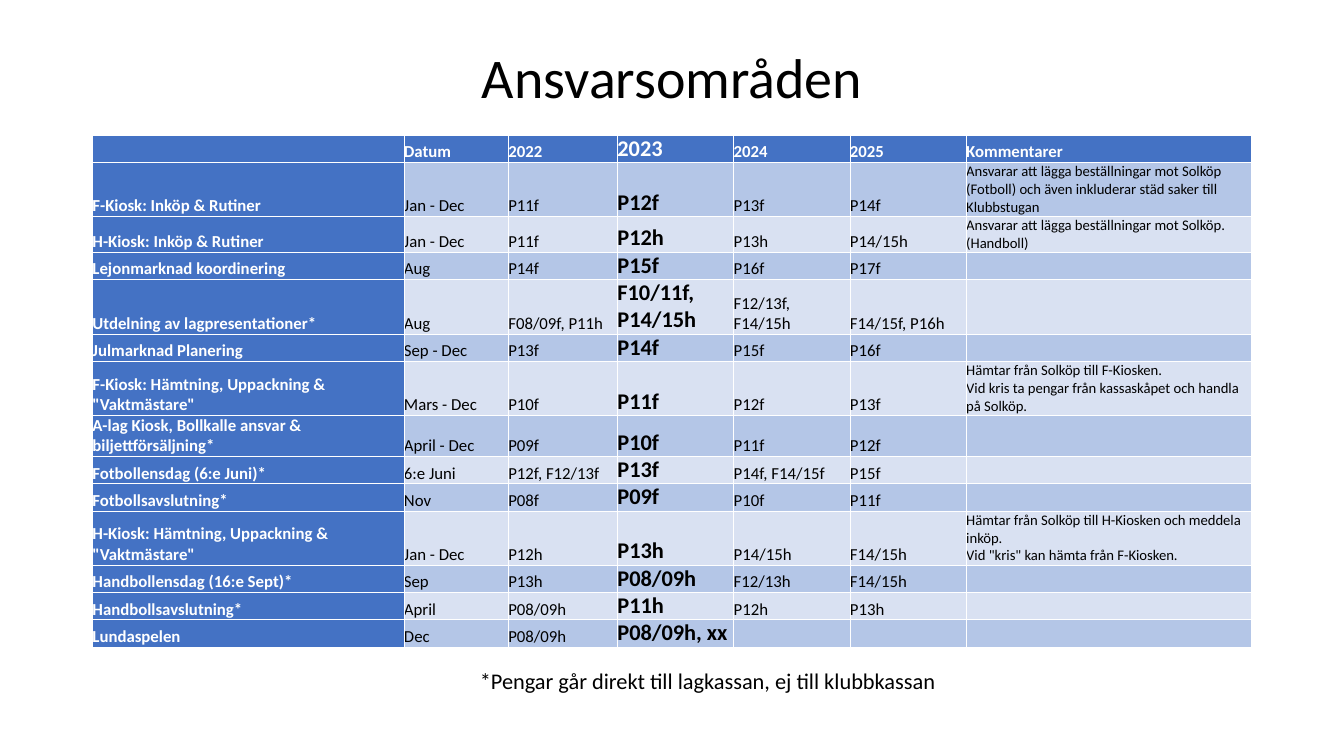
from dataclasses import dataclass

from lxml import etree
from pptx import Presentation
from pptx import util as u
from pptx.dml.color import RGBColor
from pptx.enum import text
from pptx.oxml import ns


@dataclass(frozen=True)
class Theme:
    font: str = "Calibri"
    ink: str = "000000"
    white: str = "FFFFFF"
    blue: str = "4472C4"
    bands: tuple[str, str] = ("B4C6E7", "D9E1F2")
    title_size: float = 40
    footnote_size: float = 16
    current_year_size: float = 16
    body_size: float = 12
    comment_size: float = 10.5
    grid_width: float = 0.5


@dataclass(frozen=True)
class Duty:
    name: str
    date: str
    teams: tuple[str, str, str, str]
    comment: str = ""
    height: float = 0.69


@dataclass(frozen=True)
class TextStyle:
    size: float
    color: str
    bold: bool = False


THEME = Theme()
CURRENT_YEAR_COLUMN = 3
COMMENT_COLUMN = 6
COLUMN_WIDTHS = (7.85, 2.63, 2.75, 2.93, 2.93, 2.93, 7.19)

HEADING = Duty("", "Datum", ("2022", "2023", "2024", "2025"), "Kommentarer")
DUTIES = (
    Duty("F-Kiosk: Inköp & Rutiner", "Jan - Dec", ("P11f", "P12f", "P13f", "P14f"),
         "Ansvarar att lägga beställningar mot Solköp (Fotboll) "
         "och även inkluderar städ saker till Klubbstugan", 1.36),
    Duty("H-Kiosk: Inköp & Rutiner", "Jan - Dec", ("P11f", "P12h", "P13h", "P14/15h"),
         "Ansvarar att lägga beställningar mot Solköp. (Handboll)", 0.9),
    Duty("Lejonmarknad koordinering", "Aug", ("P14f", "P15f", "P16f", "P17f")),
    Duty("Utdelning av lagpresentationer*", "Aug",
         ("F08/09f, P11h", "F10/11f, P14/15h", "F12/13f, F14/15h", "F14/15f, P16h"),
         height=1.38),
    Duty("Julmarknad Planering", "Sep - Dec", ("P13f", "P14f", "P15f", "P16f")),
    Duty('F-Kiosk: Hämtning, Uppackning & "Vaktmästare"', "Mars - Dec",
         ("P10f", "P11f", "P12f", "P13f"),
         "Hämtar från Solköp till F-Kiosken.\v"
         "Vid kris ta pengar från kassaskåpet och handla på Solköp.", 1.36),
    Duty("A-lag Kiosk, Bollkalle ansvar & biljettförsäljning*", "April - Dec",
         ("P09f", "P10f", "P11f", "P12f"), height=1.03),
    Duty("Fotbollensdag (6:e Juni)*", "6:e Juni",
         ("P12f, F12/13f", "P13f", "P14f, F14/15f", "P15f")),
    Duty("Fotbollsavslutning*", "Nov", ("P08f", "P09f", "P10f", "P11f")),
    Duty('H-Kiosk: Hämtning, Uppackning & "Vaktmästare"', "Jan - Dec",
         ("P12h", "P13h", "P14/15h", "F14/15h"),
         "Hämtar från Solköp till H-Kiosken och meddela inköp.\v"
         'Vid "kris" kan hämta från F-Kiosken.', 1.36),
    Duty("Handbollensdag (16:e Sept)*", "Sep",
         ("P13h", "P08/09h", "F12/13h", "F14/15h")),
    Duty("Handbollsavslutning*", "April", ("P08/09h", "P11h", "P12h", "P13h")),
    Duty("Lundaspelen", "Dec", ("P08/09h", "P08/09h, xx", "", "")),
)


def write(frame, wording: str, style: TextStyle) -> None:
    frame.text = wording
    for paragraph in frame.paragraphs:
        for run in paragraph.runs:
            run.font.name = THEME.font
            run.font.size = u.Pt(style.size)
            run.font.bold = style.bold
            run.font.color.rgb = RGBColor.from_string(style.color)
        if not wording:
            ending = etree.SubElement(paragraph._p, ns.qn("a:endParaRPr"))
            ending.set("sz", str(int(style.size * 100)))


def write_centred(shape, wording: str, size: float) -> None:
    frame = shape.text_frame
    frame.word_wrap = True
    frame.vertical_anchor = text.MSO_ANCHOR.MIDDLE
    write(frame, wording, TextStyle(size, THEME.ink))
    frame.paragraphs[0].alignment = text.PP_ALIGN.CENTER
    frame.paragraphs[0].line_spacing = 0.9


def place(shape, left: float, top: float, width: float, height: float) -> None:
    shape.left, shape.top = u.Cm(left), u.Cm(top)
    shape.width, shape.height = u.Cm(width), u.Cm(height)


def draw_borders(cell) -> None:
    properties = cell._tc.get_or_add_tcPr()
    for side in ("lnL", "lnR", "lnT", "lnB"):
        line = etree.SubElement(properties, ns.qn(f"a:{side}"),
                                w=str(u.Pt(THEME.grid_width)))
        fill = etree.SubElement(line, ns.qn("a:solidFill"))
        etree.SubElement(fill, ns.qn("a:srgbClr"), val=THEME.white)


def cell_style(row: int, column: int) -> TextStyle:
    on_blue = row == 0 or column == 0
    size = THEME.body_size
    if column == CURRENT_YEAR_COLUMN:
        size = THEME.current_year_size
    elif column == COMMENT_COLUMN and row > 0:
        size = THEME.comment_size
    return TextStyle(size, THEME.white if on_blue else THEME.ink,
                     on_blue or column == CURRENT_YEAR_COLUMN)


def cell_fill(row: int, column: int) -> str:
    return THEME.blue if row == 0 or column == 0 else THEME.bands[(row - 1) % 2]


def draw_schedule(slide) -> None:
    duties = (HEADING, *DUTIES)
    schedule = slide.shapes.add_table(
        len(duties), len(COLUMN_WIDTHS), u.Cm(2.33), u.Cm(3.4),
        u.Cm(sum(COLUMN_WIDTHS)), u.Cm(sum(duty.height for duty in duties))).table
    schedule.horz_banding = False
    for column, width in zip(schedule.columns, COLUMN_WIDTHS):
        column.width = u.Cm(width)
    for row, duty in enumerate(duties):
        schedule.rows[row].height = u.Cm(duty.height)
        wordings = (duty.name, duty.date, *duty.teams, duty.comment)
        for column, wording in enumerate(wordings):
            cell = schedule.cell(row, column)
            cell.margin_left = cell.margin_right = 0
            cell.margin_top = cell.margin_bottom = 0
            cell.vertical_anchor = text.MSO_ANCHOR.BOTTOM
            draw_borders(cell)
            cell.fill.solid()
            cell.fill.fore_color.rgb = RGBColor.from_string(cell_fill(row, column))
            write(cell.text_frame, wording, cell_style(row, column))


def main() -> None:
    deck = Presentation()
    deck.slide_width, deck.slide_height = u.Cm(33.87), u.Cm(19.05)
    slide = deck.slides.add_slide(deck.slide_layouts[5])

    heading = slide.shapes.title
    place(heading, 2.8, 0.48, 28.27, 3.1)
    write_centred(heading, "Ansvarsområden", THEME.title_size)

    footnote = slide.shapes.add_textbox(u.Cm(3.7), u.Cm(16.13), u.Cm(28.27), u.Cm(2.13))
    write_centred(footnote, "*Pengar går direkt till lagkassan, ej till klubbkassan",
                  THEME.footnote_size)

    draw_schedule(slide)
    deck.save("out.pptx")


if __name__ == "__main__":
    main()
